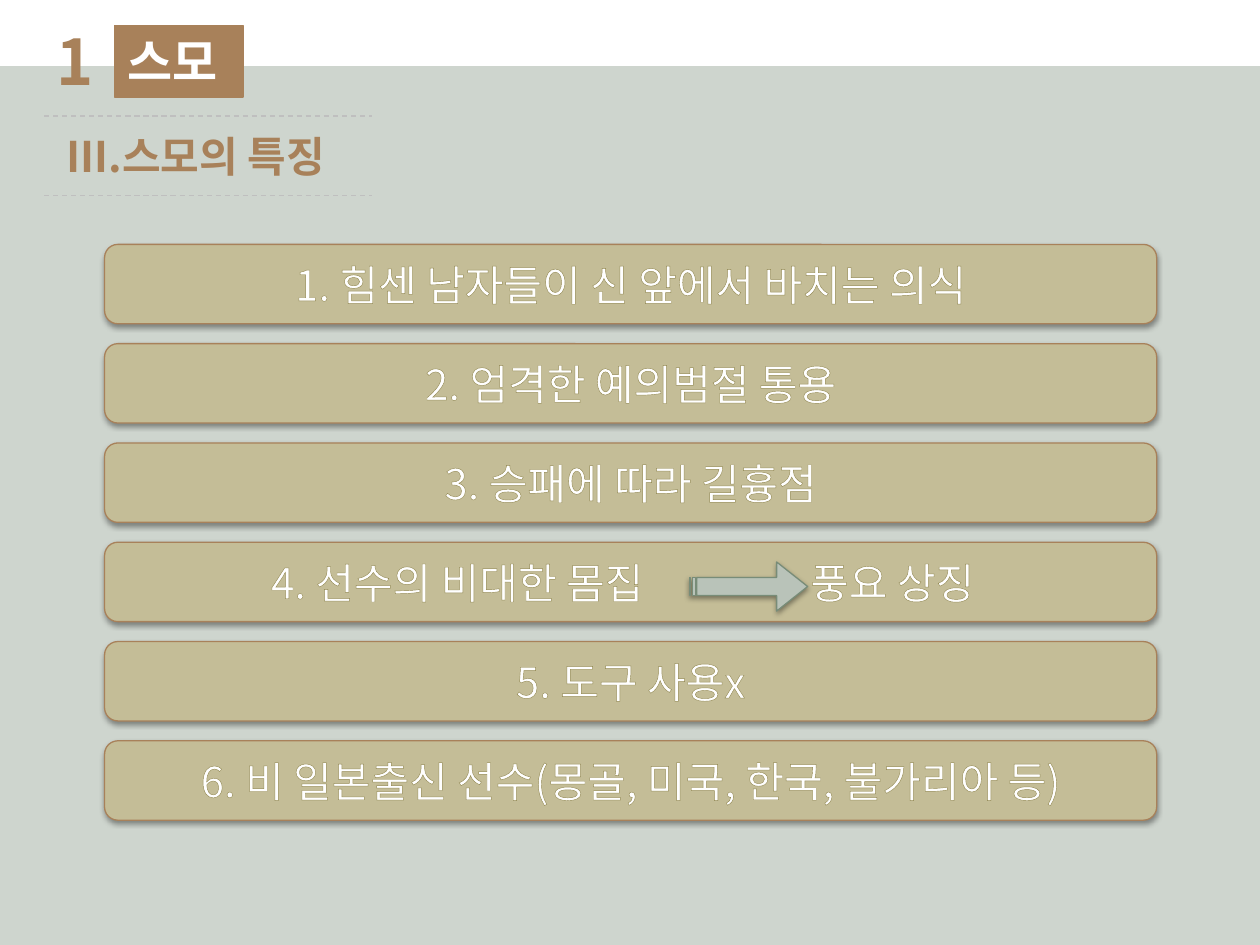
from lxml import etree
from pptx import Presentation, util as u
from pptx.dml.color import RGBColor
from pptx.enum import dml, shapes, text
from pptx.oxml import parse_xml
from pptx.oxml.ns import nsdecls, qn

COLORS = {
    "sage": "CED5CE", "brown": "A8815A", "white": "FFFFFF", "khaki": "C4BD97",
    "olive": "948A54", "rule": "BFBFBF", "arrow": "B9C3B9", "arrow_edge": "788C78",
}
FONT = "Noto Sans CJK KR"
WIDTH, HEIGHT = 10, 7.5

FEATURES = [
    "1. 힘센 남자들이 신 앞에서 바치는 의식",
    "2. 엄격한 예의범절 통용",
    "3. 승패에 따라 길흉점",
    "4. 선수의 비대한 몸집\t풍요 상징",
    "5. 도구 사용x",
    "6. 비 일본출신 선수(몽골, 미국, 한국, 불가리아 등)",
]
BAR_LEFT, BAR_WIDTH, BAR_HEIGHT = 0.83, 8.35, 0.63
FIRST_BAR, LAST_BAR = 1.94, 5.88
BAR_PITCH = (LAST_BAR - FIRST_BAR) / (len(FEATURES) - 1)
SPLIT_INDENT, SPLIT_TAB = 1.19, 4.28


def rgb(name):
    return RGBColor.from_string(COLORS[name])


def inches(*lengths):
    return [u.Inches(length) for length in lengths]


def add_block(slide, kind, box, fill, edge=None):
    block = slide.shapes.add_shape(kind, *inches(*box))
    block.shadow.inherit = False
    block.fill.solid()
    block.fill.fore_color.rgb = rgb(fill)
    if edge:
        block.line.color.rgb = rgb(edge)
        block.line.width = u.Pt(0.75)
    else:
        block.line.fill.background()
    return block


def add_soft_shadow(block):
    effects = block._element.spPr.find(qn("a:effectLst"))
    effects.append(parse_xml(
        f'<a:outerShdw {nsdecls("a")} blurRad="{u.Pt(3.1)}" dist="{u.Pt(1.6)}" '
        'dir="5400000" rotWithShape="0"><a:srgbClr val="000000">'
        '<a:alpha val="38000"/></a:srgbClr></a:outerShdw>'))


def write(frame, words, size, color, align=text.PP_ALIGN.LEFT, bold=False):
    """Write one paragraph, with the font set for Latin and East Asian letters."""
    paragraph = frame.paragraphs[0]
    paragraph.alignment = align
    run = paragraph.add_run()
    run.text = words
    run.font.size = u.Pt(size)
    run.font.bold = bold
    run.font.color.rgb = rgb(color)
    run.font.name = FONT
    etree.SubElement(run.font._element, qn("a:ea"), typeface=FONT)
    return run


def outline_letters(run, color):
    run.font._element.insert(0, parse_xml(
        f'<a:ln {nsdecls("a")} w="{u.Pt(0.75)}"><a:solidFill>'
        f'<a:srgbClr val="{COLORS[color]}"/></a:solidFill></a:ln>'))


def add_label(slide, box, words, size):
    frame = slide.shapes.add_textbox(*inches(*box)).text_frame
    frame.word_wrap = True
    write(frame, words, size, "brown", bold=True)


def add_rule(slide, y):
    rule = slide.shapes.add_connector(
        shapes.MSO_CONNECTOR.STRAIGHT, *inches(0.35, y, 2.95, y))
    rule.line.color.rgb = rgb("rule")
    rule.line.width = u.Pt(0.75)
    rule.line.dash_style = dml.MSO_LINE.DASH
    etree.SubElement(rule._element.spPr, qn("a:effectLst"))


def add_feature(slide, row, words):
    top = FIRST_BAR + row * BAR_PITCH
    bar = add_block(slide, shapes.MSO_SHAPE.ROUNDED_RECTANGLE,
                    (BAR_LEFT, top, BAR_WIDTH, BAR_HEIGHT), "khaki", "brown")
    add_soft_shadow(bar)
    frame = bar.text_frame
    frame.vertical_anchor = text.MSO_ANCHOR.MIDDLE
    split = "\t" in words
    align = text.PP_ALIGN.LEFT if split else text.PP_ALIGN.CENTER
    outline_letters(write(frame, words, 24, "white", align), "olive")
    if split:
        leave_room_for_arrow(frame)


def leave_room_for_arrow(frame):
    frame.margin_left = u.Inches(SPLIT_INDENT + 0.1)
    properties = frame.paragraphs[0]._p.get_or_add_pPr()
    stops = etree.SubElement(properties, qn("a:tabLst"))
    etree.SubElement(stops, qn("a:tab"), pos=str(u.Inches(SPLIT_TAB)), algn="l")


def add_arrow(slide):
    arrow = add_block(slide, shapes.MSO_SHAPE.STRIPED_RIGHT_ARROW,
                      (5.47, 4.46, 0.94, 0.39), "arrow", "arrow_edge")
    arrow.adjustments[0] = 0.37
    arrow.adjustments[1] = 0.63
    add_soft_shadow(arrow)


def add_heading(slide):
    add_label(slide, (0.43, 0.99, 2.44, 0.5), "Ⅲ.스모의 특징", 24)
    topic = add_block(slide, shapes.MSO_SHAPE.RECTANGLE,
                      (0.91, 0.2, 1.02, 0.57), "brown", "brown")
    topic.text_frame.vertical_anchor = text.MSO_ANCHOR.MIDDLE
    write(topic.text_frame, "스모", 28, "white", text.PP_ALIGN.JUSTIFY, bold=True)
    add_label(slide, (0.35, 0.13, 1.26, 0.71), "1", 36)
    for y in (1.55, 0.92):
        add_rule(slide, y)


def main():
    deck = Presentation()
    deck.slide_width, deck.slide_height = inches(WIDTH, HEIGHT)
    slide = deck.slides.add_slide(deck.slide_layouts[6])
    band_top = 0.07 * HEIGHT
    add_block(slide, shapes.MSO_SHAPE.RECTANGLE,
              (0, band_top, WIDTH, HEIGHT - band_top), "sage")
    add_heading(slide)
    for row, words in enumerate(FEATURES):
        add_feature(slide, row, words)
    add_arrow(slide)
    deck.save("out.pptx")


if __name__ == "__main__":
    main()
